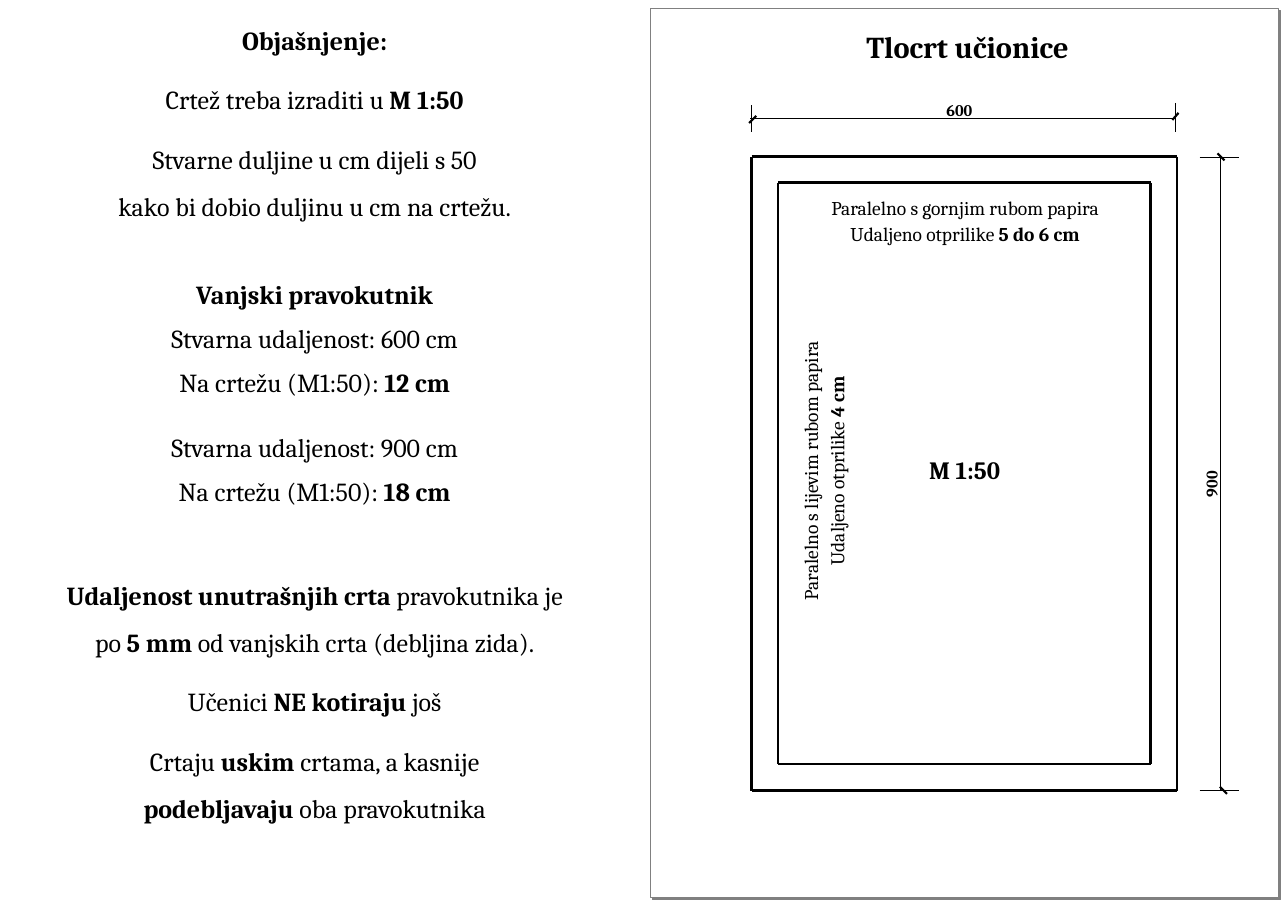
from lxml.etree import SubElement as Sub
from pptx import Presentation
from pptx.dml.color import RGBColor as RGB
from pptx.enum.shapes import MSO_CONNECTOR as CONN, MSO_SHAPE as SHAPE
from pptx.enum.text import MSO_ANCHOR as ANCHOR, PP_ALIGN as ALIGN
from pptx.oxml.ns import qn
from pptx.util import Cm, Pt

FONT = "Cambria"
BLACK, GRAY, WHITE = "000000", "808080", "FFFFFF"
THIN, MID, BOLD = 0.75, 2, 3

# Each entry: text, line spacing, space before; *stars* mark bold
GUIDE = [
    ("*Objašnjenje:*", 1.5, 0),
    ("Crtež treba izraditi u *M 1:50*", 1.5, 12),
    ("Stvarne duljine u cm dijeli s 50\n"
     "kako bi dobio duljinu u cm na crtežu.", 1.5, 12),
    ("*Vanjski pravokutnik*", 1, 52.8),
    ("Stvarna udaljenost: 600 cm", 1, 12),
    ("Na crtežu (M1:50): *12 cm*", 1, 12),
    ("Stvarna udaljenost: 900 cm", 1, 30.7),
    ("Na crtežu (M1:50): *18 cm*", 1, 12),
    ("*Udaljenost unutrašnjih crta* pravokutnika je\n"
     "po *5 mm* od vanjskih crta (debljina zida).", 1.5, 52.8),
    ("Učenici *NE kotiraju* još", 1.5, 12),
    ("Crtaju *uskim* crtama, a kasnije\n"
     "*podebljavaju* oba pravokutnika", 1.5, 12),
]
TOP_NOTE = [
    ("Paralelno s gornjim rubom papira", 0.7, 0),
    ("Udaljeno otprilike *5 do 6 cm*", 0.7, 9),
]
LEFT_NOTE = [
    ("Paralelno s lijevim rubom papira", 0.7, 0),
    ("Udaljeno otprilike *4 cm*", 0.7, 9),
]


def color(code):
    return RGB.from_string(code)


def fill_runs(para, text):
    """Add runs and line breaks, switching bold at each star."""
    parts = text.split("*")
    plain = [part for part in parts[::2] if part]
    if not plain:
        para.font.bold = True
    for i, part in enumerate(parts):
        for j, line in enumerate(part.split("\n")):
            if j:
                para.add_line_break()
            if line:
                run = para.add_run()
                run.text = line
                if plain and i % 2:
                    run.font.bold = True


def add_text(slide, box, items, size, anchor=ANCHOR.TOP, turn=0,
             wrap=True, align=ALIGN.CENTER):
    shape = slide.shapes.add_textbox(*map(Cm, box))
    shape.rotation = turn
    frame = shape.text_frame
    frame.word_wrap = wrap
    frame.vertical_anchor = anchor
    frame.margin_left = frame.margin_right = 0
    frame.margin_top = frame.margin_bottom = 0
    for i, (text, space, before) in enumerate(items):
        para = frame.add_paragraph() if i else frame.paragraphs[0]
        para.alignment = align
        para.line_spacing = space
        para.space_before = Pt(before)
        font = para.font
        font.name, font.size = FONT, Pt(size)
        font.color.rgb = color(BLACK)
        fill_runs(para, text)


def add_line(slide, ends, width):
    line = slide.shapes.add_connector(CONN.STRAIGHT, *map(Cm, ends))
    line.line.color.rgb = color(BLACK)
    line.line.width = Pt(width)
    Sub(line._element.spPr, qn("a:effectLst"))


def add_walls(slide, left, top, right, low, widths):
    """Draw four sides: top, right, bottom, left."""
    sides = [(left, top, right, top), (right, top, right, low),
             (left, low, right, low), (left, top, left, low)]
    for ends, width in zip(sides, widths):
        add_line(slide, ends, width)


def add_size(slide, line, marks, ticks):
    """Draw a dimension line with end marks and slanted ticks."""
    for ends in [line, *marks]:
        add_line(slide, ends, THIN)
    for ends in ticks:
        add_line(slide, ends, MID)


def add_page(slide, box):
    page = slide.shapes.add_shape(SHAPE.RECTANGLE, *map(Cm, box))
    page.fill.solid()
    page.fill.fore_color.rgb = color(WHITE)
    page.line.color.rgb = color(GRAY)
    page.line.width = Pt(THIN)
    page.shadow.inherit = False
    effects = page._element.spPr.find(qn("a:effectLst"))
    shade = Sub(effects, qn("a:outerShdw"), blurRad="0",
                dist=str(Pt(2.8)), dir="2700000", algn="ctr",
                rotWithShape="0")
    Sub(shade, qn("a:srgbClr"), val=GRAY)


def main():
    deck = Presentation()
    deck.slide_width, deck.slide_height = Cm(42), Cm(29.7)
    slide = deck.slides.add_slide(deck.slide_layouts[6])

    # Explanation on the left
    add_text(slide, (0, 0.28, 20.52, 28.24), GUIDE, 24)

    # Drawing sheet and title
    add_page(slide, (21.2, 0.28, 20.5, 28.98))
    add_text(slide, (22.1, 0.66, 18.9, 1.73),
             [("*Tlocrt učionice*", 1, 0)], 28, ANCHOR.MIDDLE)

    # Outer and inner rectangle
    add_walls(slide, 24.51, 5.11, 38.37, 25.78, (BOLD, MID, BOLD, BOLD))
    add_walls(slide, 25.38, 5.96, 37.52, 24.92, (BOLD, BOLD, MID, MID))

    # Width
    add_size(slide, (24.46, 3.86, 38.36, 3.86),
             [(24.51, 3.43, 24.51, 4.29), (38.34, 3.35, 38.34, 4.29)],
             [(24.66, 3.78, 24.43, 4.01), (38.43, 3.68, 38.23, 3.91)])
    add_text(slide, (30.86, 3.25, 1.55, 0.64), [("*600*", 1, 0)], 15,
             ANCHOR.BOTTOM, wrap=False, align=ALIGN.LEFT)

    # Height
    add_size(slide, (39.8, 5.08, 39.8, 25.78),
             [(39.12, 5.13, 40.41, 5.13), (39.12, 25.78, 40.41, 25.78)],
             [(39.7, 5, 39.93, 5.23), (39.78, 25.65, 40.01, 25.88)])
    add_text(slide, (38.74, 15.14, 1.5, 0.64), [("*900*", 1, 0)], 15,
             ANCHOR.BOTTOM, 270, wrap=False, align=ALIGN.LEFT)

    # Scale and notes
    add_text(slide, (29.03, 14.83, 4.85, 0.97), [("*M 1:50*", 1, 0)], 23)
    add_text(slide, (26.62, 6.6, 9.7, 1.5), TOP_NOTE, 18)
    add_text(slide, (21.62, 14.6, 10.54, 1.5), LEFT_NOTE, 18,
             ANCHOR.BOTTOM, 270)

    deck.save("out.pptx")


if __name__ == "__main__":
    main()
